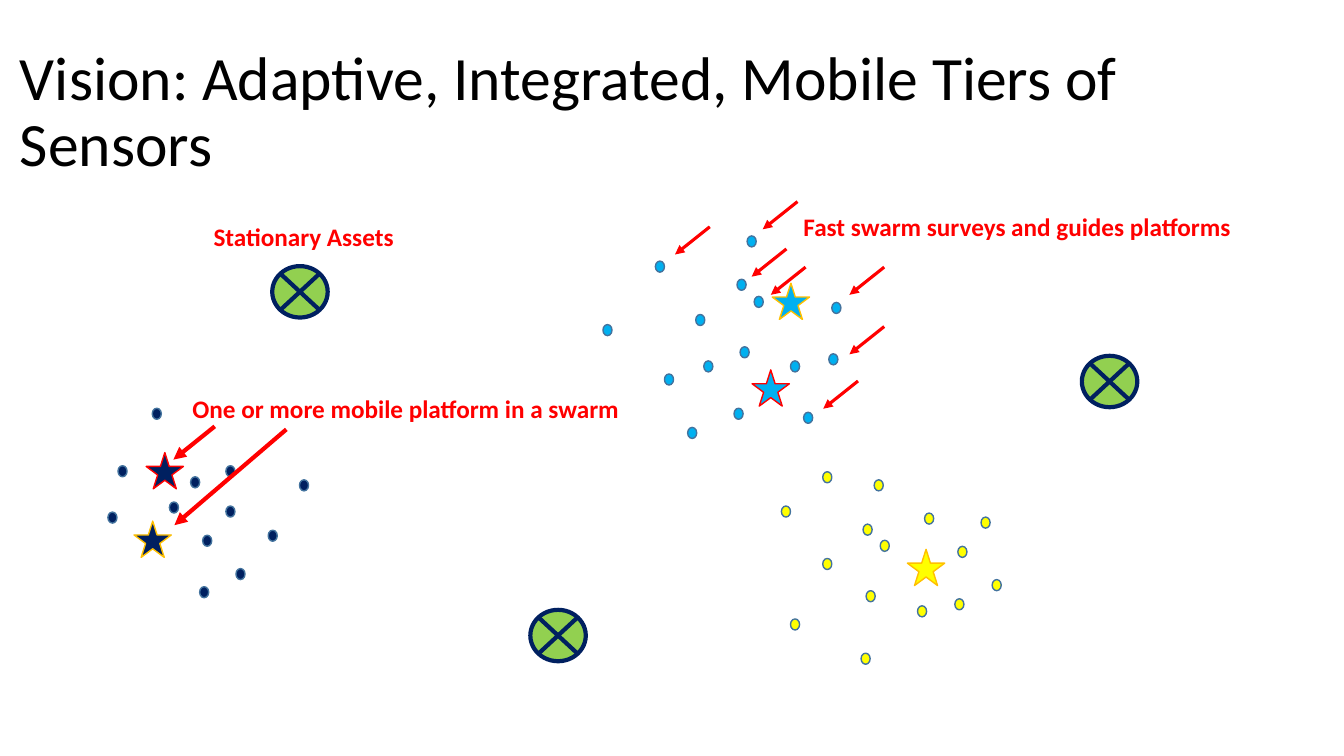
from pptx import Presentation
from pptx.dml.color import RGBColor
from pptx.enum.shapes import MSO_CONNECTOR, MSO_SHAPE
from pptx.enum.text import MSO_ANCHOR
from pptx.oxml.ns import qn
from pptx.util import Inches, Pt
from lxml.etree import SubElement

CELL = Inches(0.1)
BLACK = RGBColor(0x00, 0x00, 0x00)
RED = RGBColor(0xFF, 0x00, 0x00)
GOLD = RGBColor(0xFF, 0xC0, 0x00)
NAVY = RGBColor(0x00, 0x20, 0x60)
CYAN = RGBColor(0x00, 0xB0, 0xF0)
YELLOW = RGBColor(0xFF, 0xFF, 0x00)
GREEN = RGBColor(0x92, 0xD0, 0x50)
STEEL = RGBColor(0x43, 0x73, 0x9E)

DOT_SIZE = (0.9, 1.1)
STAR_SIZE = (3.7, 3.6)
ASSET_SIZE = (5.5, 5.1)
TITLE_FONT = {"name": "Calibri", "size": Pt(44)}
LABEL_FONT = {"name": "Calibri", "size": Pt(18), "bold": True}

ASSETS = [(27, 26.4), (107.3, 35.3), (52.6, 60.5)]
FAST_STEP = (-3.45, 2.75)
FAST_STARTS = [(27.9, 12.4), (20.1, 6.5), (27.9, 6.5), (19.3, 0),
               (25.3, 17.8), (18.2, 4.7), (10.6, 2.5)]

SWARMS = [
    {
        "origin": (10.7, 40.5),
        "color": NAVY,
        "stars": [((2.6, 11.2), GOLD), ((3.8, 4.4), RED)],
        "dots": [(1, 5.7), (8.2, 6.8), (11.7, 9.7), (15.9, 12.1), (9.1, 17.7),
                 (6.1, 9.3), (0, 10.3), (9.4, 12.6), (11.7, 5.7), (12.7, 15.9),
                 (19, 7.1), (4.4, 0)],
        "label": ("One or more mobile platform in a swarm", (7.4, -2)),
        "arrows": [((10.6, 1.8), (6.5, 5.1)), ((17.7, 2.1), (6.6, 11.6))],
        "weight": 3,
    },
    {
        "origin": (59.8, 20),
        "color": CYAN,
        "stars": [((16.8, 8.1), GOLD), ((14.8, 16.7), RED)],
        "dots": [(14.3, 3.4), (19.9, 20.9), (0, 12.2), (6.1, 17.1), (22.4, 15.1),
                 (8.4, 22.4), (13.3, 7.7), (22.7, 10), (9.2, 11.2), (10, 15.8),
                 (13.6, 14.4), (18.6, 15.8), (5.2, 5.9), (13, 20.5), (15, 9.4)],
        "label": ("Fast swarm surveys and guides platforms", (18.9, 0.5)),
        "arrows": [((x, y), (x + FAST_STEP[0], y + FAST_STEP[1]))
                   for x, y in FAST_STARTS],
        "weight": 2.25,
    },
    {
        "origin": (77.5, 46.8),
        "color": YELLOW,
        "stars": [((12.5, 7.7), GOLD)],
        "dots": [(9.2, 0.8), (4.1, 0), (19.8, 4.5), (0.9, 14.6), (17.2, 12.6),
                 (14.2, 4.1), (8.1, 5.2), (17.5, 7.4), (4.1, 8.6), (20.9, 10.7),
                 (8.4, 11.8), (13.5, 13.3), (0, 3.4), (7.9, 18), (9.8, 6.8)],
    },
]


def cells(*values):
    return [int(round(value * CELL)) for value in values]


def shift(origin, offset):
    return origin[0] + offset[0], origin[1] + offset[1]


def add_marker(page, kind, corner, size, fill, outline, weight=1):
    marker = page.shapes.add_shape(kind, *cells(*corner, *size))
    marker.shadow.inherit = False
    marker.fill.solid()
    marker.fill.fore_color.rgb = fill
    marker.line.color.rgb = outline
    marker.line.width = Pt(weight)


def add_arrow(page, start, end, weight):
    arrow = page.shapes.add_connector(MSO_CONNECTOR.STRAIGHT, *cells(*start, *end))
    arrow.line.color.rgb = RED
    arrow.line.width = Pt(weight)
    SubElement(arrow.line._get_or_add_ln(), qn("a:tailEnd"), type="triangle")
    SubElement(arrow._element.spPr, qn("a:effectLst"))


def add_text(page, text, corner, size, font, color, wrap=False):
    box = page.shapes.add_textbox(*cells(*corner, *size))
    frame = box.text_frame
    frame.word_wrap = wrap
    para = frame.paragraphs[0]
    span = para.add_run()
    span.text = text
    for name, value in font.items():
        setattr(span.font, name, value)
    span.font.color.rgb = color
    return frame


def add_title(page, corner, size):
    frame = add_text(page, "Vision: Adaptive, Integrated, Mobile Tiers of Sensors",
                     corner, size, TITLE_FONT, BLACK, wrap=True)
    frame.vertical_anchor = MSO_ANCHOR.MIDDLE
    frame.paragraphs[0].line_spacing = 0.9


def add_assets(page, origin):
    add_text(page, "Stationary Assets", shift(origin, (20.2, 21.5)), (20, 4),
             LABEL_FONT, RED)
    for offset in ASSETS:
        add_marker(page, MSO_SHAPE.FLOWCHART_SUMMING_JUNCTION, shift(origin, offset),
                   ASSET_SIZE, GREEN, NAVY, 3)


def add_swarm(page, swarm):
    origin, color = swarm["origin"], swarm["color"]
    for offset, outline in swarm["stars"]:
        add_marker(page, MSO_SHAPE.STAR_5_POINT, shift(origin, offset),
                   STAR_SIZE, color, outline)
    for offset in swarm["dots"]:
        add_marker(page, MSO_SHAPE.FLOWCHART_CONNECTOR, shift(origin, offset),
                   DOT_SIZE, color, STEEL)
    if "label" in swarm:
        text, offset = swarm["label"]
        add_text(page, text, shift(origin, offset), (44.8, 4), LABEL_FONT, RED)
    for start, end in swarm.get("arrows", []):
        add_arrow(page, shift(origin, start), shift(origin, end), swarm["weight"])


def main():
    deck = Presentation()
    deck.slide_width, deck.slide_height = Inches(13.33), Inches(7.5)
    page = deck.slides.add_slide(deck.slide_layouts[6])
    add_title(page, (1, 4), (130, 14.5))
    add_assets(page, (0, 0))
    for swarm in SWARMS:
        add_swarm(page, swarm)
    deck.save("out.pptx")


if __name__ == "__main__":
    main()
